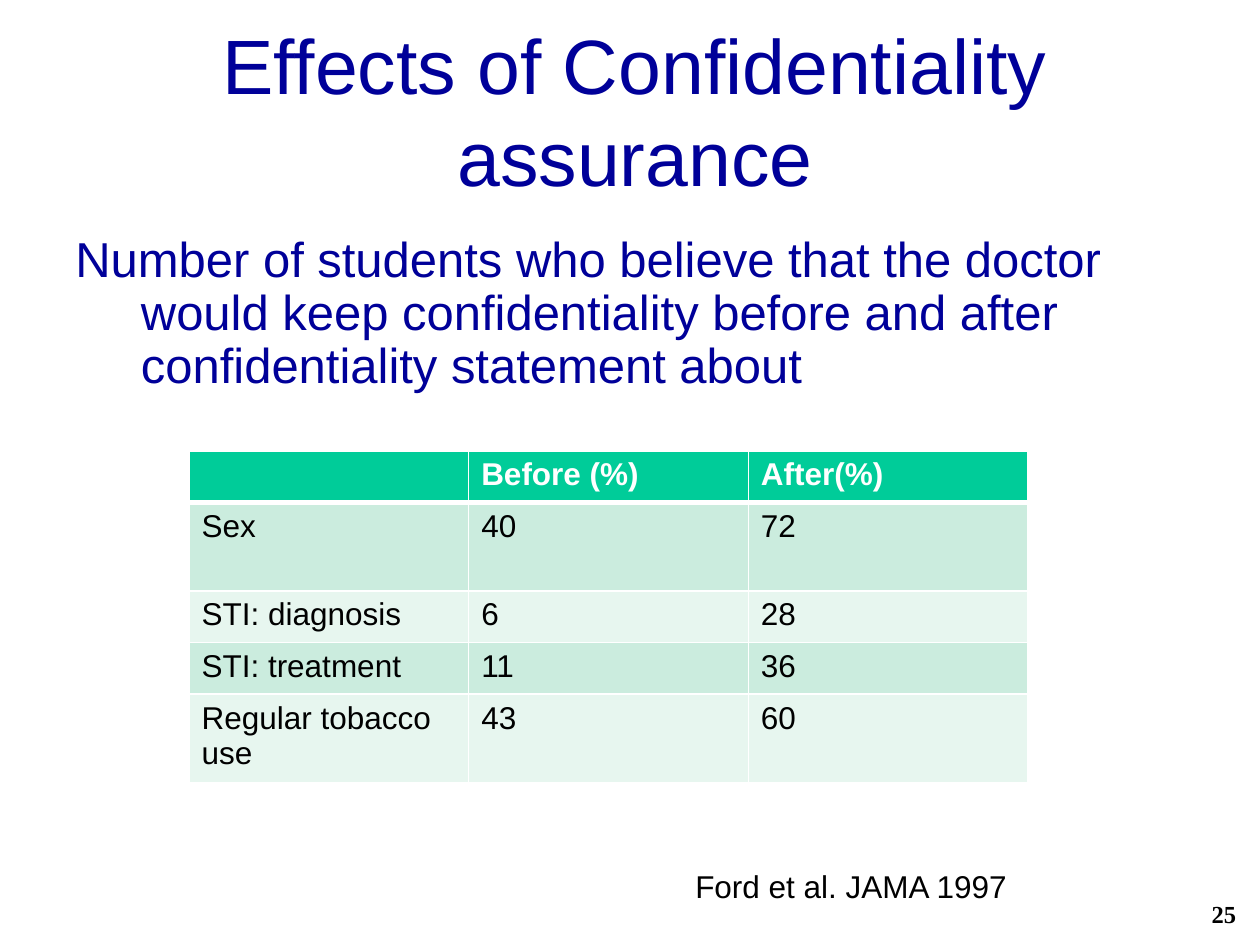
"""Build a slide on how a confidentiality assurance changes students' beliefs."""
from pptx import Presentation
from pptx import util as u
from pptx.dml import color
from pptx.enum import text
from pptx.oxml import ns, xmlchemy

HUES = {"navy": "000099", "black": "000000", "white": "FFFFFF",
        "head": "00CC99", "odd": "CBECDE", "even": "E7F6EF"}
ROWS = [("", "Before (%)", "After(%)"),
        ("Sex", "40", "72"),
        ("STI: diagnosis", "6", "28"),
        ("STI: treatment", "11", "36"),
        ("Regular tobacco use", "43", "60")]
TALLS = [0.41, 0.7, 0.41, 0.41, 0.7]


def rgb(hue):
    return color.RGBColor.from_string(HUES[hue])


def add_run(para, words, size, hue, bold=False, face="Arial"):
    run = para.add_run()
    run.text = words
    font = run.font
    font.size, font.bold, font.name = u.Pt(size), bold, face
    font.color.rgb = rgb(hue)


def add_text(slide, place, words, size, hue, wrap=True, bold=False, face="Arial"):
    box = slide.shapes.add_textbox(*map(u.Inches, place))
    frame = box.text_frame
    frame.word_wrap = wrap
    para = frame.paragraphs[0]
    add_run(para, words, size, hue, bold, face)
    return frame, para


def add_edge(cell, side, width):
    props = cell._tc.get_or_add_tcPr()
    line = xmlchemy.OxmlElement(f"a:{side}")
    line.set("w", str(u.Pt(width)))
    fill = xmlchemy.OxmlElement("a:solidFill")
    tint = xmlchemy.OxmlElement("a:srgbClr")
    tint.set("val", HUES["white"])
    fill.append(tint)
    line.append(fill)
    props.insert(len(props.findall(ns.qn("a:lnL") + "")) and len(props), line)


def add_cell(cell, words, row):
    head = row == 0
    for side in ("lnL", "lnR", "lnT", "lnB"):
        thick = (row, side) in ((0, "lnB"), (1, "lnT"))
        add_edge(cell, side, 3 if thick else 1)
    cell.fill.solid()
    cell.fill.fore_color.rgb = rgb("head" if head else "odd" if row % 2 else "even")
    if words:
        add_run(cell.text_frame.paragraphs[0], words, 18,
                "white" if head else "black", head)


def add_grid(slide):
    area = map(u.Inches, (1.5, 3.58, 6.67, sum(TALLS)))
    table = slide.shapes.add_table(len(ROWS), len(ROWS[0]), *area).table
    for col in table.columns:
        col.width = u.Inches(2.22)
    for row, (tall, words) in enumerate(zip(TALLS, ROWS)):
        table.rows[row].height = u.Inches(tall)
        for col, word in enumerate(words):
            add_cell(table.cell(row, col), word, row)


def add_title(slide):
    frame, para = add_text(slide, (0.5, 0.33, 9.08, 1.75),
                           "Effects of Confidentiality assurance", 44, "navy")
    frame.vertical_anchor = text.MSO_ANCHOR.MIDDLE
    frame.margin_bottom = u.Inches(0.72)
    para.alignment = text.PP_ALIGN.CENTER


def add_body(slide):
    frame, para = add_text(slide, (0.5, 1.25, 9.08, 6.25),
                           "Number of students who believe that the doctor would keep "
                           "confidentiality before and after confidentiality statement "
                           "about", 28, "navy")
    frame.margin_top = u.Inches(0.62)
    para.line_spacing = 0.9
    props = para._p.get_or_add_pPr()
    props.set("marL", str(u.Inches(0.52)))
    props.set("indent", str(u.Inches(-0.52)))


def add_page(slide):
    frame, para = add_text(slide, (7.83, 7, 2.08, 0.5), "25", 14, "black",
                           wrap=False, bold=True, face="Times New Roman")
    frame.vertical_anchor = text.MSO_ANCHOR.MIDDLE
    para.alignment = text.PP_ALIGN.RIGHT


def main():
    deck = Presentation()
    deck.slide_width, deck.slide_height = u.Inches(10), u.Inches(7.5)
    slide = deck.slides.add_slide(deck.slide_layouts[6])
    add_page(slide)
    add_title(slide)
    add_body(slide)
    add_text(slide, (5.42, 6.83, 4.1, 0.4), "Ford et al. JAMA 1997", 18, "black")
    add_grid(slide)
    deck.save("out.pptx")


if __name__ == "__main__":
    main()
